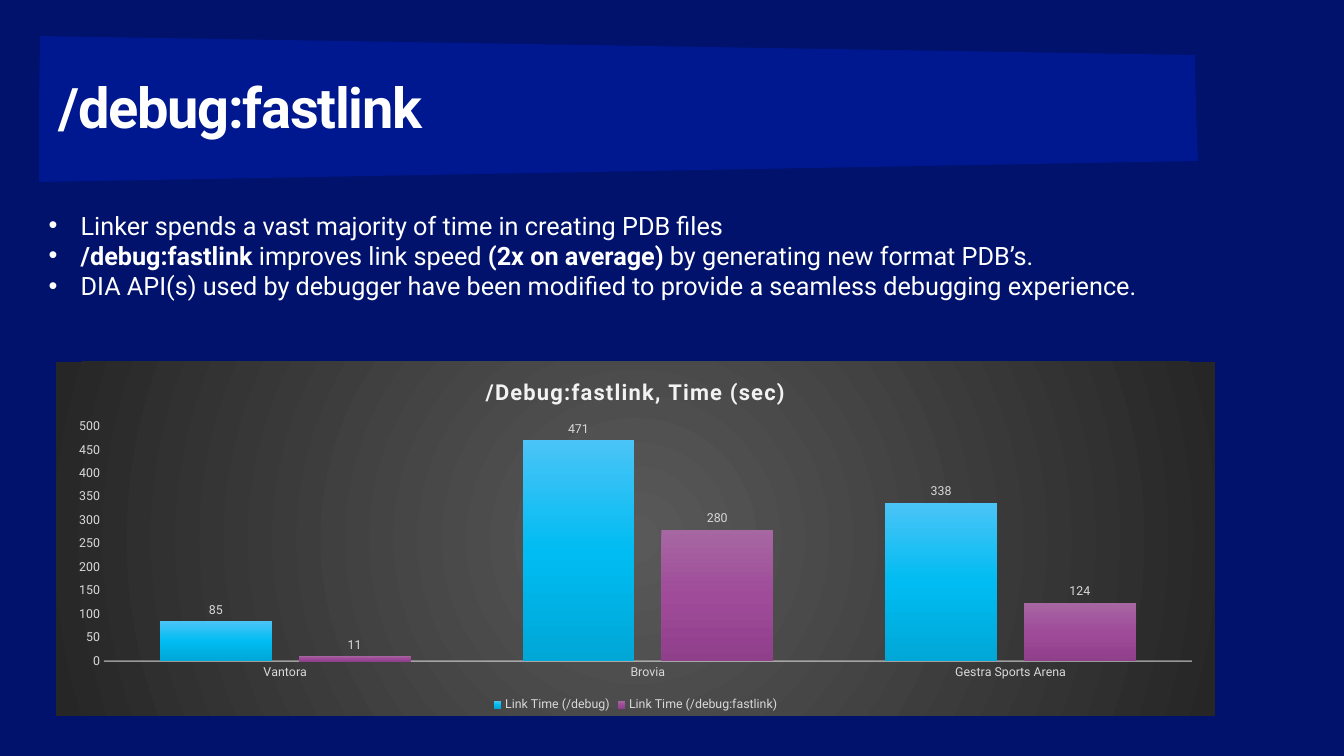
from lxml import etree
from pptx import Presentation
from pptx.chart.data import CategoryChartData
from pptx.dml.color import RGBColor
from pptx.enum.chart import XL_CHART_TYPE, XL_LABEL_POSITION, XL_LEGEND_POSITION, XL_TICK_MARK
from pptx.enum.text import MSO_ANCHOR, PP_ALIGN
from pptx.oxml import parse_xml
from pptx.oxml.ns import nsdecls, qn
from pptx.util import Pt

COLUMNS = XL_CHART_TYPE.COLUMN_CLUSTERED
LABEL_ABOVE = XL_LABEL_POSITION.OUTSIDE_END
LEGEND_BOTTOM = XL_LEGEND_POSITION.BOTTOM
NO_TICK = XL_TICK_MARK.NONE
MIDDLE = MSO_ANCHOR.MIDDLE
LEFT = PP_ALIGN.LEFT

PX = 9255  # EMU per pixel
FONT = "Roboto"
COLORS = {
    "background": "00126B",
    "banner": "00188F",
    "text": "FFFFFF",
    "chart_title": "F2F2F2",
    "chart_text": "D9D9D9",
}
CHART_GRADIENT = {0: "595959", 100: "262626"}
SERIES = [
    ("Link Time (/debug)", (85, 471, 338), {0: "4BC4F7", 50: "00BCF2", 100: "00A7D7"}),
    ("Link Time (/debug:fastlink)", (11, 280, 124), {0: "A767A2", 50: "9F4B99", 100: "903F8B"}),
]
BULLETS = [
    [("Linker spends a vast majority of time in creating PDB files", False)],
    [
        ("/debug:fastlink ", True),
        ("improves link speed ", False),
        ("(2x on average)", True),
        (" by generating new format PDB’s.", False),
    ],
    [("DIA API(s) used by debugger have been modified to provide a seamless debugging experience.", False)],
]


def add_span(para, text, size, color="text", bold=False, spacing=0):
    """Append a run; spacing is the gap between letters in points."""
    span = para.add_run()
    span.text = text
    span.font.name = FONT
    span.font.size = Pt(size)
    span.font.bold = bold
    span.font.color.rgb = RGBColor.from_string(COLORS[color])
    if spacing:
        span.font._element.set("spc", str(spacing * 100))


def make_gradient(stops, direction):
    """Return a gradFill element from percent-to-colour stops and its direction XML."""
    stop_xml = "".join(
        f'<a:gs pos="{percent * 1000}"><a:srgbClr val="{color}"/></a:gs>'
        for percent, color in stops.items()
    )
    return parse_xml(
        f'<a:gradFill {nsdecls("a")} rotWithShape="1"><a:gsLst>{stop_xml}</a:gsLst>{direction}</a:gradFill>'
    )


deck = Presentation()
deck.slide_width, deck.slide_height = 1344 * PX, 756 * PX
page = deck.slides.add_slide(deck.slide_layouts[6])
page.background.fill.solid()
page.background.fill.fore_color.rgb = RGBColor.from_string(COLORS["background"])

# Bullet list
box = page.shapes.add_textbox(39 * PX, 205 * PX, 1123 * PX, 163 * PX)
frame = box.text_frame
frame.word_wrap = True
for number, spans in enumerate(BULLETS):
    para = frame.add_paragraph() if number else frame.paragraphs[0]
    properties = para._p.get_or_add_pPr()
    properties.set("marL", str(32 * PX))
    properties.set("indent", str(-32 * PX))
    properties.append(parse_xml(f'<a:buClr {nsdecls("a")}><a:srgbClr val="{COLORS["text"]}"/></a:buClr>'))
    properties.append(parse_xml(f'<a:buFont {nsdecls("a")} typeface="Arial"/>'))
    properties.append(parse_xml(f'<a:buChar {nsdecls("a")} char="•"/>'))
    for text, bold in spans:
        add_span(para, text, 18.4, bold=bold)

# Title banner
outline = page.shapes.build_freeform(40, 36, scale=PX)
outline.add_line_segments([(1195, 55), (1196, 108), (1198, 161), (39, 182), (39, 109)], close=True)
banner = outline.convert_to_shape()
banner.shadow.inherit = False
banner.fill.solid()
banner.fill.fore_color.rgb = RGBColor.from_string(COLORS["banner"])
banner.line.fill.background()
frame = banner.text_frame
frame.word_wrap = True
frame.vertical_anchor = MIDDLE
frame.margin_left = frame.margin_right = 20 * PX
frame.margin_top = frame.margin_bottom = 16 * PX
para = frame.paragraphs[0]
para.alignment = LEFT
para.line_spacing = 0.95
add_span(para, "/debug:fastlink", 40.8, bold=True, spacing=-1)

# Link time chart
data = CategoryChartData()
data.categories = ["Vantora", "Brovia", "Gestra Sports Arena"]
for name, values, _ in SERIES:
    data.add_series(name, values)
chart = page.shapes.add_chart(COLUMNS, 56 * PX, 362 * PX, 1159 * PX, 354 * PX, data).chart
chart.has_title = True
chart.chart_title.include_in_layout = False
add_span(chart.chart_title.text_frame.paragraphs[0], "/Debug:fastlink, Time (sec)",
         16, "chart_title", bold=True, spacing=1)
chart.has_legend = True
chart.legend.position = LEGEND_BOTTOM
chart.legend.include_in_layout = False

plot = chart.plots[0]
plot.gap_width = 100
plot.overlap = -24
plot.vary_by_categories = False
plot.has_data_labels = True
labels = plot.data_labels
labels.show_value = True
labels.position = LABEL_ABOVE
for series, (_, _, stops) in zip(plot.series, SERIES):
    series.invert_if_negative = False
    fill = make_gradient(stops, '<a:lin ang="5400000" scaled="0"/>')
    series._element.get_or_add_spPr().insert(0, fill)

category_axis, value_axis = chart.category_axis, chart.value_axis
for axis in (category_axis, value_axis):
    axis.major_tick_mark = axis.minor_tick_mark = NO_TICK
    axis.has_major_gridlines = False
value_axis.minimum_scale, value_axis.maximum_scale = 0, 500
value_axis.major_unit = 50
value_axis.format.line.fill.background()
axis_line = category_axis.format.line
axis_line.width = Pt(1)
axis_line.color.rgb = RGBColor.from_string(COLORS["chart_title"])
line_color = category_axis._element.find(".//" + qn("a:ln")).find(".//" + qn("a:srgbClr"))
etree.SubElement(line_color, qn("a:alpha")).set("val", "54000")

for font in (chart.font, chart.legend.font, labels.font,
             category_axis.tick_labels.font, value_axis.tick_labels.font):
    font.name = FONT
    font.size = Pt(9)
    font.color.rgb = RGBColor.from_string(COLORS["chart_text"])

chart_area = parse_xml(f'<c:spPr {nsdecls("c", "a")}><a:ln><a:noFill/></a:ln></c:spPr>')
chart_area.insert(0, make_gradient(
    CHART_GRADIENT,
    '<a:path path="circle"><a:fillToRect l="50000" t="50000" r="50000" b="50000"/></a:path>',
))
chart._chartSpace.find(qn("c:txPr")).addprevious(chart_area)

deck.save("out.pptx")
